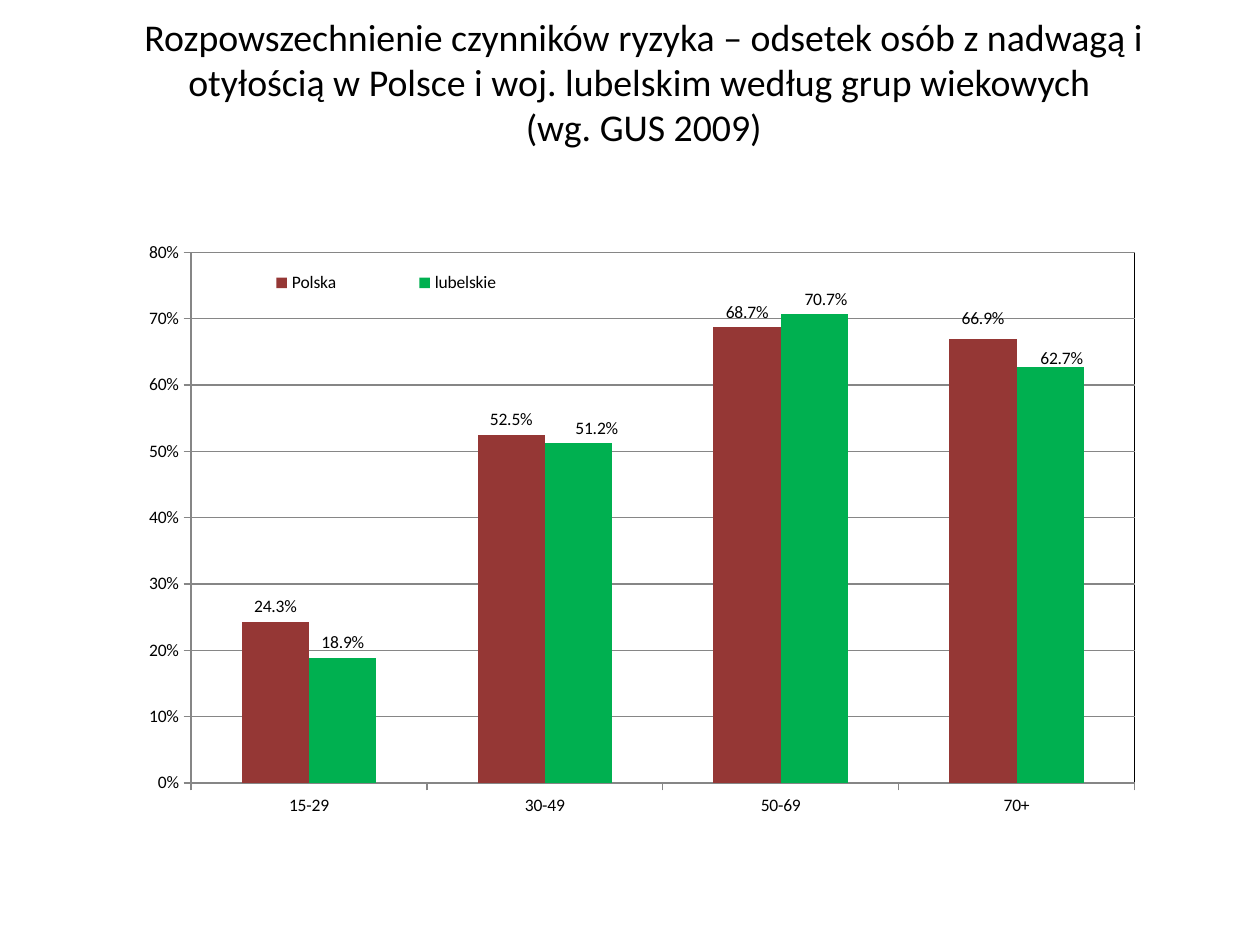
from pptx import Presentation
from pptx.chart.data import CategoryChartData as ChartData
from pptx.dml.color import RGBColor
from pptx.enum.chart import XL_CHART_TYPE as Kind, XL_LABEL_POSITION as Spot
from pptx.enum.chart import XL_LEGEND_POSITION as Side, XL_TICK_MARK as Tick
from pptx.enum.text import MSO_ANCHOR as Anchor, MSO_AUTO_SIZE as Fit, PP_ALIGN as Align
from pptx.oxml import parse_xml
from pptx.oxml.ns import nsdecls, qn
from pptx.util import Inches, Pt

FONT = "Calibri"
COLORS = {"text": "000000", "Polska": "953735", "lubelskie": "00B050", "grid": "868686"}
AGES = ["15-29", "30-49", "50-69", "70+"]
SHARES = {
    "Polska": [0.243, 0.525, 0.687, 0.669],
    "lubelskie": [0.189, 0.512, 0.707, 0.627],
}
# Labels nudged from their usual place, as shares of the chart size
SHIFTS = {
    "Polska": {3: (0, -0.01)},
    "lubelskie": {1: (0.016, 0), 2: (0.01, 0), 3: (0.01, 0.01)},
}


def color(name):
    return RGBColor.from_string(COLORS[name])


def style(font, size):
    font.name, font.size = FONT, Pt(size)
    font.color.rgb = color("text")


def layout(x, y, size=None, inner=False):
    parts = '<c:layoutTarget val="inner"/>' if inner else ""
    if size:
        parts += '<c:xMode val="edge"/><c:yMode val="edge"/>'
    parts += f'<c:x val="{x}"/><c:y val="{y}"/>'
    if size:
        parts += f'<c:w val="{size[0]}"/><c:h val="{size[1]}"/>'
    return parse_xml(f'<c:layout {nsdecls("c")}><c:manualLayout>{parts}'
                     '</c:manualLayout></c:layout>')


def place(node, new, after=None):
    """Put a layout first in the node, or right after the named child."""
    for old in node.findall(qn("c:layout")):
        node.remove(old)
    if after:
        node.find(qn(after)).addnext(new)
    else:
        node.insert(0, new)


def add_title(slide, box, text):
    title = slide.shapes.title
    title.left, title.top, title.width, title.height = box
    frame = title.text_frame
    frame.text = text
    frame.word_wrap, frame.auto_size = True, Fit.NONE
    frame.vertical_anchor = Anchor.MIDDLE
    para = frame.paragraphs[0]
    para.alignment = Align.CENTER
    for run in para.runs:
        style(run.font, 21.6)


def style_axes(chart):
    values = chart.value_axis
    values.minimum_scale, values.maximum_scale, values.major_unit = 0, 0.8, 0.1
    values.tick_labels.number_format = "0%"
    values.tick_labels.number_format_is_linked = False
    values.has_major_gridlines = True
    for axis in (values, chart.category_axis):
        axis.major_tick_mark = Tick.OUTSIDE
    for line in (values.format.line, chart.category_axis.format.line,
                 values.major_gridlines.format.line):
        line.color.rgb, line.width = color("grid"), Pt(0.75)


def style_series(series):
    series.format.fill.solid()
    series.format.fill.fore_color.rgb = color(series.name)
    labels = series.data_labels
    labels.show_value = True
    labels.number_format, labels.number_format_is_linked = "0.0%", False
    labels.position = Spot.OUTSIDE_END
    style(labels.font, 10)
    for index, shift in SHIFTS[series.name].items():
        series.points[index].data_label.position = Spot.OUTSIDE_END
    for label in series._element.iter(qn("c:dLbl")):
        index = int(label.find(qn("c:idx")).get("val"))
        place(label, layout(*SHIFTS[series.name][index]), "c:idx")
        label.find(qn("c:layout")).addnext(parse_xml(
            f'<c:numFmt {nsdecls("c")} formatCode="0.0%" sourceLinked="0"/>'))


def add_bars(slide, box):
    data = ChartData(number_format="0.0%")
    data.categories = AGES
    for name, shares in SHARES.items():
        data.add_series(name, shares)
    chart = slide.shapes.add_chart(Kind.COLUMN_CLUSTERED, *box, data).chart
    chart.has_title = False
    style(chart.font, 10)
    style_axes(chart)
    plot = chart.plots[0]
    plot.gap_width, plot.overlap, plot.vary_by_categories = 150, 0, False
    for series in plot.series:
        style_series(series)

    # Legend over the upper left of the plot
    chart.has_legend = True
    legend = chart.legend
    legend.position, legend.include_in_layout = Side.RIGHT, False
    style(legend.font, 10)
    place(legend._element, layout(0.12, 0.07, (0.33, 0.06)), "c:legendPos")

    # Plot frame
    area = chart._chartSpace.chart.plotArea
    place(area, layout(0.113, 0.051, (0.832, 0.851), inner=True))
    area.append(parse_xml(
        f'<c:spPr {nsdecls("c", "a")}><a:noFill/><a:ln w="9525"><a:solidFill>'
        f'<a:srgbClr val="{COLORS["text"]}"/></a:solidFill></a:ln></c:spPr>'))


def main():
    deck = Presentation()
    deck.slide_width, deck.slide_height = Inches(10), Inches(7.5)
    slide = deck.slides.add_slide(deck.slide_layouts[5])
    add_title(slide, (Inches(0.5), Inches(0.3), Inches(9.22), Inches(0.69)),
              "Rozpowszechnienie czynników ryzyka – odsetek osób z nadwagą i otyłością "
              "w Polsce i woj. lubelskim według grup wiekowych \v(wg. GUS 2009)")
    add_bars(slide, (Inches(0.5), Inches(1.75), Inches(9), Inches(4.95)))
    deck.save("out.pptx")


if __name__ == "__main__":
    main()
